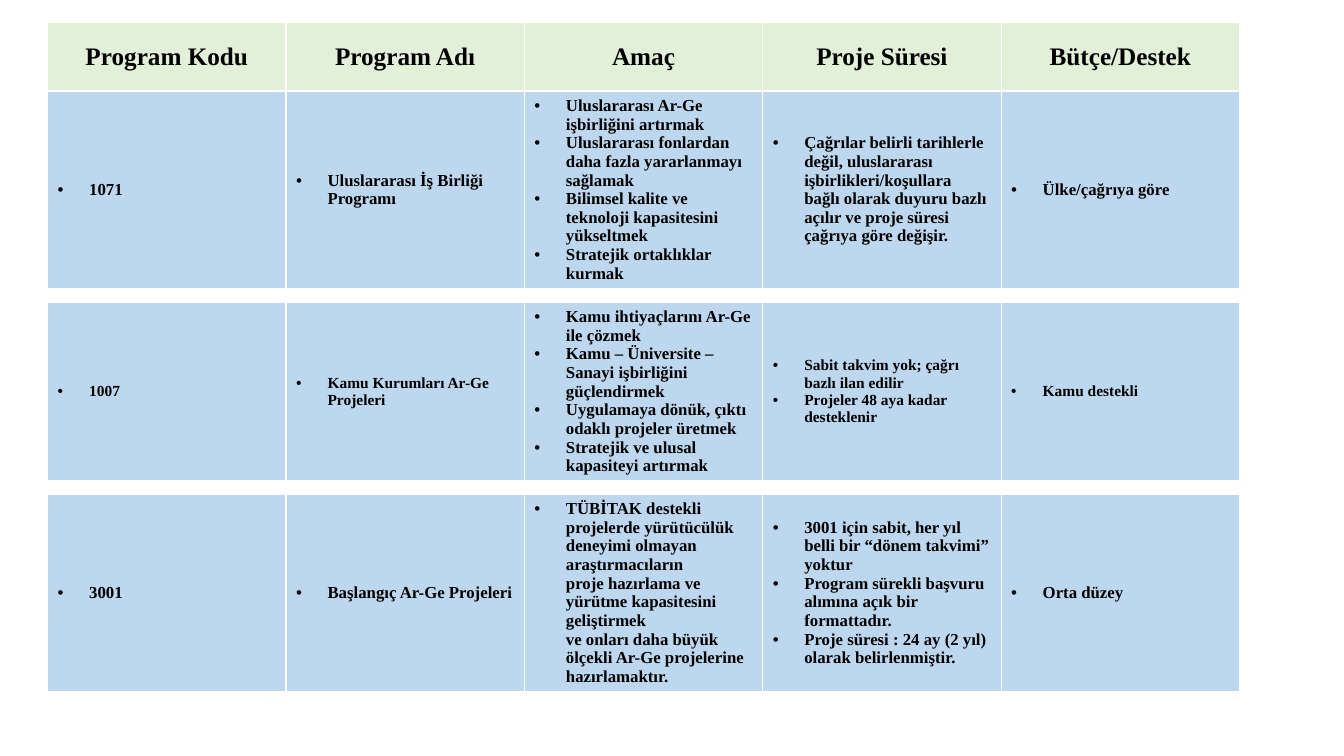
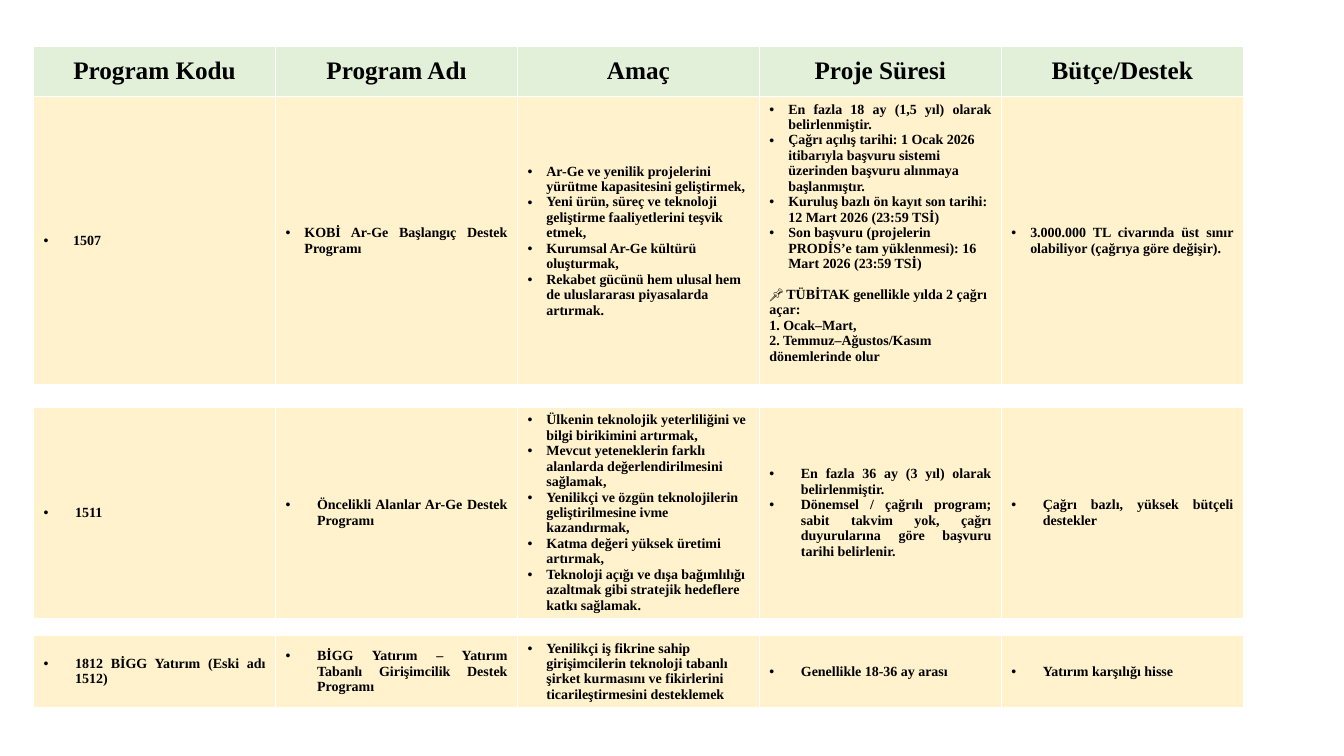
from copy import deepcopy

from lxml import etree
from pptx import Presentation
from pptx import util as u
from pptx.dml.color import RGBColor
from pptx.enum import text
from pptx.oxml import ns

BLACK = RGBColor(0x00, 0x00, 0x00)
GREEN = RGBColor(0xE2, 0xF0, 0xD9)
BLUE = RGBColor(0xBD, 0xD7, 0xEE)
CREAM = RGBColor(0xFF, 0xF2, 0xCC)

FONT = "Times New Roman"
WIDE, NARROW = 22.5, 13.5  # hanging indents of the bullets
LEFT, CENTER, JUSTIFY = text.PP_ALIGN.LEFT, text.PP_ALIGN.CENTER, text.PP_ALIGN.JUSTIFY
HEADINGS = ["Program Kodu", "Program Adı", "Amaç", "Proje Süresi", "Bütçe/Destek"]


def para(words, **fmt):
    """Pair a paragraph with the format that differs from its row."""
    return words, fmt


def paras(*lines, **fmt):
    return [para(line, **fmt) for line in lines]


def write(p, words, size=12, align=LEFT, indent=WIDE, before=0):
    """Fill a paragraph; an indent above zero gives it a hanging bullet."""
    p.text = words
    p.alignment = align
    p.space_before = u.Pt(before)
    if indent:
        pPr = p._p.get_or_add_pPr()
        pPr.set("marL", str(u.Pt(indent)))
        pPr.set("indent", str(-u.Pt(indent)))
        etree.SubElement(pPr, ns.qn("a:buFont"), typeface="Arial")
        etree.SubElement(pPr, ns.qn("a:buChar"), char="•")
    for r in p.runs:
        r.font.name = FONT
        r.font.size = u.Pt(size)
        r.font.bold = True
        r.font.color.rgb = BLACK
    for br in p._p.findall(ns.qn("a:br")):
        br.append(deepcopy(p.runs[0]._r.rPr))


class Deck:
    def __init__(self):
        self.prs = Presentation()
        self.prs.slide_width = u.Pt(960)
        self.prs.slide_height = u.Pt(540)

    def slide(self, left, col_width, fill):
        self.s = self.prs.slides.add_slide(self.prs.slide_layouts[6])
        self.left, self.col_width, self.fill = left, col_width, fill

    def row(self, top, height, cells, fill=None, **fmt):
        """Add a one-row table; each cell is a list of para() pairs."""
        n = len(cells)
        table = self.s.shapes.add_table(
            1, n, u.Pt(self.left), u.Pt(top), u.Pt(n * self.col_width), u.Pt(height)
        ).table
        for col, cell, items in zip(table.columns, table.rows[0].cells, cells):
            col.width = u.Pt(self.col_width)
            cell.fill.solid()
            cell.fill.fore_color.rgb = fill or self.fill
            cell.vertical_anchor = text.MSO_ANCHOR.MIDDLE
            tf = cell.text_frame
            for i, (words, own) in enumerate(items):
                p = tf.add_paragraph() if i else tf.paragraphs[0]
                write(p, words, **{**fmt, **own})
        return table

    def header(self, top, height):
        self.row(top, height, [paras(h) for h in HEADINGS],
                 fill=GREEN, size=18, align=CENTER, indent=0)


def public_programs(deck):
    deck.slide(34, 170.3, BLUE)
    deck.header(16, 49)
    deck.row(65, 141, [
        paras("1071"),
        paras("Uluslararası İş Birliği Programı"),
        paras("Uluslararası Ar-Ge işbirliğini artırmak",
              "Uluslararası fonlardan daha fazla yararlanmayı sağlamak",
              "Bilimsel kalite ve teknoloji kapasitesini yükseltmek",
              "Stratejik ortaklıklar kurmak"),
        paras("Çağrılar belirli tarihlerle değil, uluslararası işbirlikleri/koşullara "
              "bağlı olarak duyuru bazlı açılır ve proje süresi çağrıya göre değişir."),
        paras("Ülke/çağrıya göre"),
    ])
    deck.row(216, 127, [
        paras("1007"),
        paras("Kamu Kurumları Ar-Ge Projeleri"),
        paras("Kamu ihtiyaçlarını Ar-Ge ile çözmek",
              "Kamu – Üniversite – Sanayi işbirliğini güçlendirmek",
              "Uygulamaya dönük, çıktı odaklı projeler üretmek",
              "Stratejik ve ulusal kapasiteyi artırmak", size=12),
        paras("Sabit takvim yok; çağrı bazlı ilan edilir",
              "Projeler 48 aya kadar desteklenir"),
        paras("Kamu destekli"),
    ], size=11)
    deck.row(353, 141, [
        paras("3001"),
        paras("Başlangıç Ar-Ge Projeleri"),
        paras("TÜBİTAK destekli projelerde yürütücülük deneyimi olmayan araştırmacıların\n"
              "proje hazırlama ve yürütme kapasitesini geliştirmek\n"
              "ve onları daha büyük ölçekli Ar-Ge projelerine hazırlamaktır."),
        paras("3001 için sabit, her yıl belli bir “dönem takvimi” yoktur",
              "Program sürekli başvuru alımına açık bir formattadır.",
              "Proje süresi : 24 ay (2 yıl) olarak belirlenmiştir."),
        paras("Orta düzey"),
    ])


def industry_programs(deck):
    body = dict(size=10, align=JUSTIFY)
    listing = dict(align=LEFT, indent=NARROW)
    plain = dict(align=LEFT, indent=0)

    deck.slide(24, 172.8, CREAM)
    deck.header(33, 36)
    table = deck.row(69, 206, [
        paras("1507", indent=21),
        paras("KOBİ Ar-Ge Başlangıç Destek Programı", indent=NARROW),
        paras("Ar-Ge ve yenilik projelerini yürütme kapasitesini geliştirmek,",
              "Yeni ürün, süreç ve teknoloji geliştirme faaliyetlerini teşvik etmek,",
              "Kurumsal Ar-Ge kültürü oluşturmak,",
              "Rekabet gücünü hem ulusal hem de uluslararası piyasalarda artırmak.",
              **listing),
        [para("En fazla 18 ay (1,5 yıl) olarak belirlenmiştir.", indent=NARROW),
         *paras("Çağrı açılış tarihi: 1 Ocak 2026 itibarıyla başvuru sistemi üzerinden "
                "başvuru alınmaya başlanmıştır.",
                "Kuruluş bazlı ön kayıt son tarihi: 12 Mart 2026 (23:59 TSİ)",
                "Son başvuru (projelerin PRODİS’e tam yüklenmesi): 16 Mart 2026 (23:59 TSİ)",
                **listing),
         para("📌 TÜBİTAK genellikle yılda 2 çağrı açar:", before=11, **plain),
         *paras("1. Ocak–Mart,", "2. Temmuz–Ağustos/Kasım dönemlerinde olur", **plain)],
        paras("3.000.000 TL civarında üst sınır olabiliyor (çağrıya göre değişir).",
              indent=NARROW),
    ], **body)
    table.cell(0, 3).margin_bottom = u.Pt(15)
    deck.row(291, 150, [
        paras("1511"),
        paras("Öncelikli Alanlar Ar-Ge Destek Programı"),
        paras("Ülkenin teknolojik yeterliliğini ve bilgi birikimini artırmak,",
              "Mevcut yeteneklerin farklı alanlarda değerlendirilmesini sağlamak,",
              "Yenilikçi ve özgün teknolojilerin geliştirilmesine ivme kazandırmak,",
              "Katma değeri yüksek üretimi artırmak,",
              "Teknoloji açığı ve dışa bağımlılığı azaltmak gibi stratejik hedeflere "
              "katkı sağlamak.", **listing),
        paras("En fazla 36 ay (3 yıl) olarak belirlenmiştir.",
              "Dönemsel / çağrılı program; sabit takvim yok, çağrı duyurularına göre "
              "başvuru tarihi belirlenir."),
        paras("Çağrı bazlı, yüksek bütçeli destekler"),
    ], **body)
    deck.row(454, 51, [
        paras("1812 BİGG Yatırım (Eski adı 1512)"),
        paras("BİGG Yatırım – Yatırım Tabanlı Girişimcilik Destek Programı"),
        paras("Yenilikçi iş fikrine sahip girişimcilerin teknoloji tabanlı şirket "
              "kurmasını ve fikirlerini ticarileştirmesini desteklemek", **listing),
        paras("Genellikle 18-36 ay arası"),
        paras("Yatırım karşılığı hisse"),
    ], **body)


def main():
    deck = Deck()
    public_programs(deck)
    industry_programs(deck)
    deck.prs.save("out.pptx")


if __name__ == "__main__":
    main()
